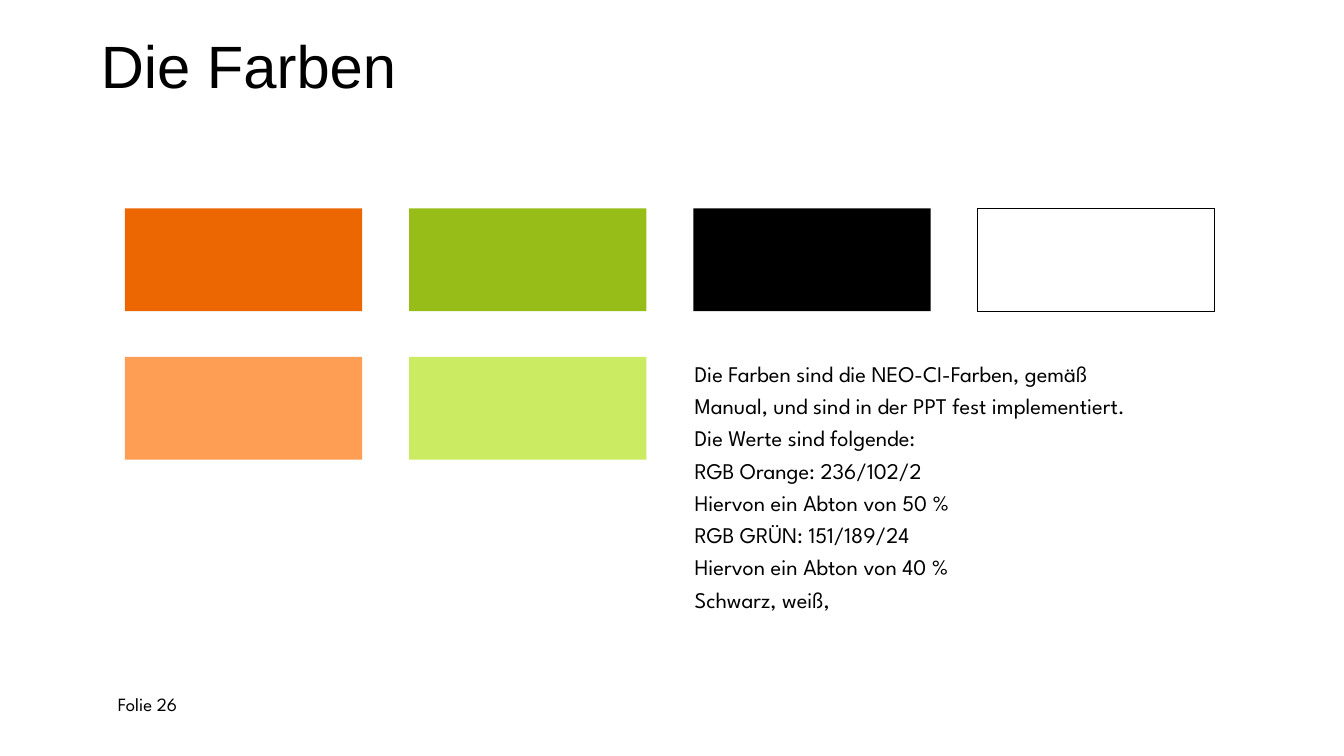
import copy
from dataclasses import dataclass

from pptx import Presentation
from pptx import util as u
from pptx.dml.color import RGBColor
from pptx.enum import shapes, text
from pptx.oxml.ns import qn

BLACK = RGBColor(0x00, 0x00, 0x00)
WHITE = RGBColor(0xFF, 0xFF, 0xFF)
ORANGE = RGBColor(0xEC, 0x66, 0x02)
GREEN = RGBColor(0x97, 0xBD, 0x18)
LIGHT_ORANGE = RGBColor(0xFE, 0x9D, 0x54)
LIGHT_GREEN = RGBColor(0xCB, 0xEB, 0x63)

BODY_FONT = "League Spartan"
SLIDE_WIDTH = 10
SLIDE_HEIGHT = SLIDE_WIDTH * 9 / 16
GRID_LEFT, GRID_TOP = 0.93, 1.55
COLUMN_GAP, ROW_GAP = 0.35, 0.34
SWATCH_WIDTH, SWATCH_HEIGHT = 1.765, 0.765


@dataclass
class Swatch:
    column: int
    row: int
    color: RGBColor
    outlined: bool = False


SWATCHES = [
    Swatch(0, 0, ORANGE),
    Swatch(1, 0, GREEN),
    Swatch(2, 0, BLACK),
    Swatch(3, 0, WHITE, outlined=True),
    Swatch(0, 1, LIGHT_ORANGE),
    Swatch(1, 1, LIGHT_GREEN),
]

# "\v" marks a line break inside a paragraph
DESCRIPTION = [
    "Die Farben sind die NEO-CI-Farben, gemäß \vManual, und sind in der PPT fest implementiert.",
    "Die Werte sind folgende:",
    "RGB Orange: 236/102/2",
    "Hiervon ein Abton von 50 %",
    "RGB GRÜN: 151/189/24",
    "Hiervon ein Abton von 40 %",
    "Schwarz, weiß,",
]


def place(box, left: float, top: float, width: float, height: float) -> None:
    box.left, box.top = u.Inches(left), u.Inches(top)
    box.width, box.height = u.Inches(width), u.Inches(height)


def write(box, lines: list[str], *, size: float, font: str = BODY_FONT,
          color: RGBColor = BLACK, spacing: float = 1.0) -> None:
    frame = box.text_frame
    frame.word_wrap = True
    frame.auto_size = text.MSO_AUTO_SIZE.NONE
    for index, line in enumerate(lines):
        para = frame.paragraphs[0] if index == 0 else frame.add_paragraph()
        para.text = line
        para.alignment = text.PP_ALIGN.LEFT
        para.line_spacing = spacing
        para.space_before = para.space_after = u.Pt(0)
        for span in para.runs:
            span.font.size = u.Pt(size)
            span.font.name = font
            span.font.color.rgb = color
        # Line breaks take the format of the text around them
        for line_break in para._p.findall(qn("a:br")):
            line_break.append(copy.deepcopy(para.runs[0]._r.rPr))


def draw_swatch(page, swatch: Swatch) -> None:
    box = page.shapes.add_shape(
        shapes.MSO_SHAPE.RECTANGLE,
        u.Inches(GRID_LEFT + swatch.column * (SWATCH_WIDTH + COLUMN_GAP)),
        u.Inches(GRID_TOP + swatch.row * (SWATCH_HEIGHT + ROW_GAP)),
        u.Inches(SWATCH_WIDTH), u.Inches(SWATCH_HEIGHT))
    box.shadow.inherit = False
    box.fill.solid()
    box.fill.fore_color.rgb = swatch.color
    if swatch.outlined:
        box.line.color.rgb = BLACK
        box.line.width = u.Pt(0.5)
    else:
        box.line.fill.background()


def add_text(page, lines: list[str], left: float, top: float,
             width: float, height: float, **style) -> None:
    box = page.shapes.add_textbox(0, 0, 0, 0)
    place(box, left, top, width, height)
    write(box, lines, **style)


def main() -> None:
    deck = Presentation()
    deck.slide_width = u.Inches(SLIDE_WIDTH)
    deck.slide_height = u.Inches(SLIDE_HEIGHT)
    page = deck.slides.add_slide(deck.slide_layouts.get_by_name("Title Only"))

    # Title
    title = page.shapes.title
    place(title, 0.75, 0.3, 8.82, 0.45)
    frame = title.text_frame
    frame.margin_left = frame.margin_right = 0
    frame.margin_top = frame.margin_bottom = 0
    frame.vertical_anchor = text.MSO_ANCHOR.MIDDLE
    write(title, ["Die Farben"], size=32, font="Arial", spacing=0.85)

    # Description and slide number
    add_text(page, DESCRIPTION, 5.07, 2.59, 4.13, 2.02, size=12, spacing=1.2)
    add_text(page, ["Folie 26"], 0.78, 5.11, 0.83, 0.27, size=10)

    # Colour swatches
    for swatch in SWATCHES:
        draw_swatch(page, swatch)

    deck.save("out.pptx")


if __name__ == "__main__":
    main()
